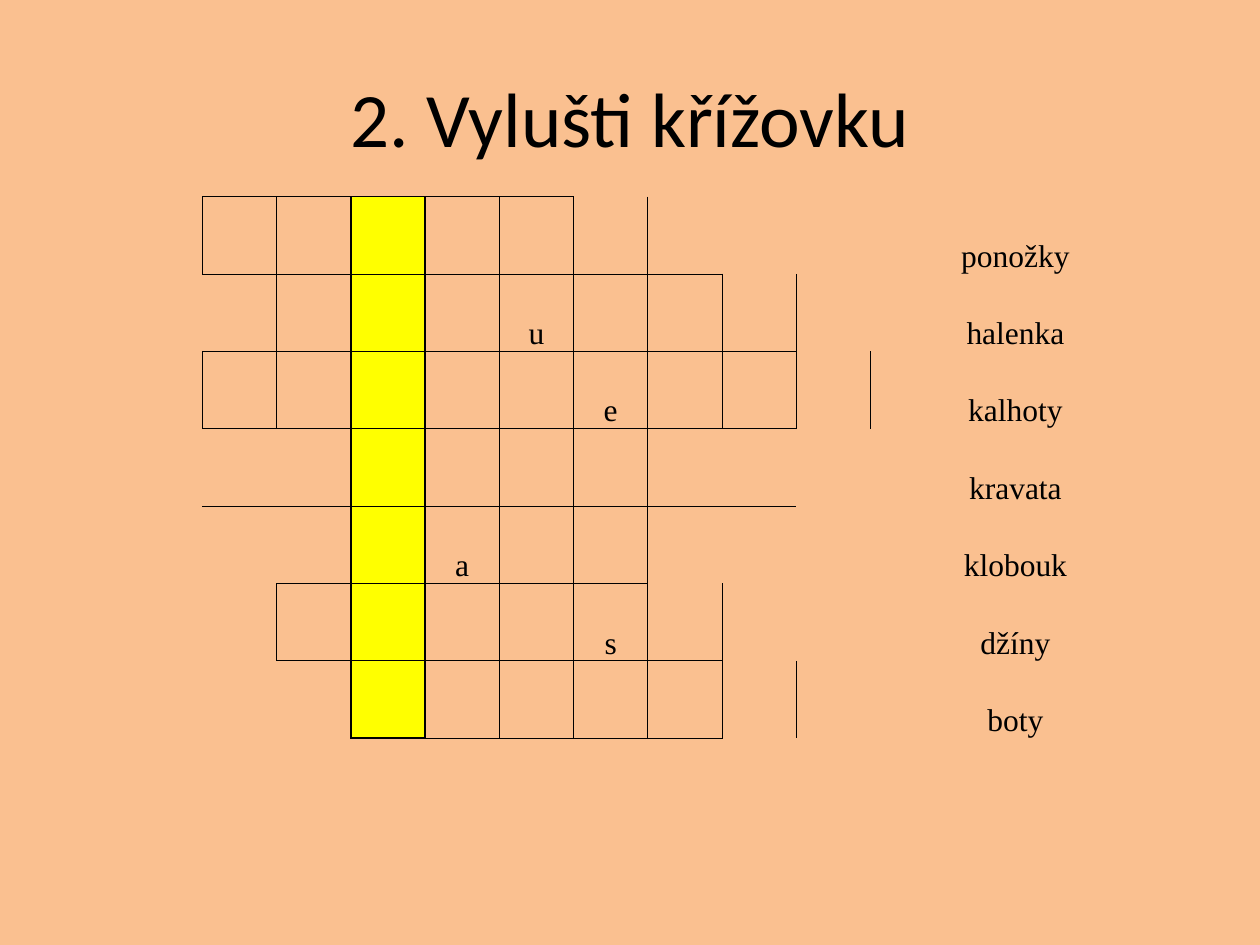
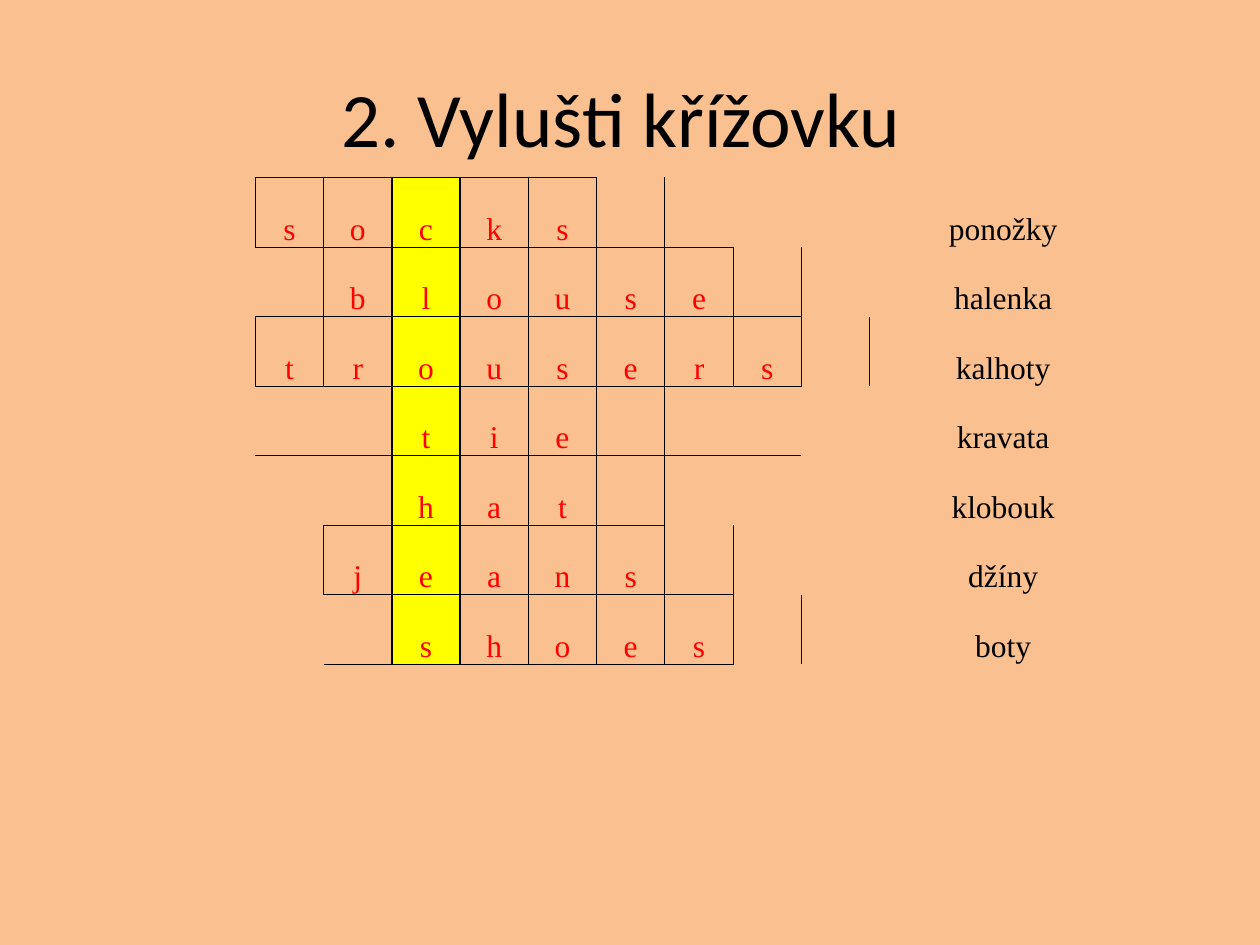
from pptx import Presentation as Deck
from pptx.dml.color import RGBColor as Color
from pptx.enum.text import MSO_ANCHOR as Anchor, PP_ALIGN as Align
from pptx.oxml import parse_xml
from pptx.oxml.ns import nsdecls
from pptx.util import Pt

HUES = {"page": "FAC090", "key": "FFFF00", "ink": "000000", "answer": "FF0000"}
PLAIN_STYLE = "{2D5ABB26-0587-4C30-8999-92F81FD0307C}"
TITLE = "2. Vylušti křížovku"

# Clue, answer, place of the key letter, place of the hint letter
WORDS = [
    ("ponožky", "socks", 2, None),
    ("halenka", "blouse", 1, 3),
    ("kalhoty", "trousers", 2, 5),
    ("kravata", "tie", 0, None),
    ("klobouk", "hat", 0, 1),
    ("džíny", "jeans", 1, 4),
    ("boty", "shoes", 0, None),
]
KEY = 3      # column of the hidden word
LAST = 10    # column of the clues
THIN, THICK = 0.5, 1


def hue(name):
    return Color.from_string(HUES[name])


def write(frame, text, size=18, font="Times New Roman", color="ink"):
    para = frame.paragraphs[0]
    para.alignment = Align.CENTER
    run = para.add_run()
    run.text = text
    run.font.size = Pt(size)
    run.font.name = font
    run.font.color.rgb = hue(color)


def add_page(deck, title):
    page = deck.slides.add_slide(deck.slide_layouts[6])
    page.background.fill.solid()
    page.background.fill.fore_color.rgb = hue("page")
    frame = page.shapes.add_textbox(Pt(36), Pt(21.6), Pt(648), Pt(90)).text_frame
    frame.word_wrap = True
    frame.vertical_anchor = Anchor.MIDDLE
    write(frame, title, size=44, font="Calibri")
    return page


def boxed(row, col):
    """Tell whether a letter belongs in this cell."""
    if not 0 <= row < len(WORDS):
        return False
    _, word, key, _ = WORDS[row]
    return 0 <= col - KEY + key < len(word)


def weigh(one, two):
    """Line width between two neighbour cells, 0 for no line."""
    if not (boxed(*one) or boxed(*two)):
        return 0
    in_key = [col == KEY for _, col in (one, two)]
    ends = boxed(*one) != boxed(*two)
    side = in_key[0] != in_key[1]
    return THICK if side or (all(in_key) and ends) else THIN


def rule(cell, row, col):
    sides = {"L": (row, col - 1), "R": (row, col + 1),
             "T": (row - 1, col), "B": (row + 1, col)}
    props = cell._tc.get_or_add_tcPr()
    for side, near in sides.items():
        width = weigh((row, col), near)
        if width:
            props.append(parse_xml(
                f'<a:ln{side} {nsdecls("a")} w="{Pt(width)}"><a:solidFill>'
                f'<a:srgbClr val="{HUES["ink"]}"/></a:solidFill></a:ln{side}>'))


def style(cell, row, col):
    cell.margin_left = cell.margin_right = cell.margin_top = Pt(0.7)
    cell.margin_bottom = 0
    cell.vertical_anchor = Anchor.BOTTOM
    rule(cell, row, col)
    if col == KEY and boxed(row, col):
        cell.fill.solid()
        cell.fill.fore_color.rgb = hue("key")
    else:
        cell.fill.background()


def add_grid(page, left, top, box, high, wide, rows, solved):
    """Draw square columns of width box and one wide clue column."""
    grid = page.shapes.add_table(rows, LAST + 1, Pt(left), Pt(top),
                                 Pt(box * LAST + wide), Pt(high * rows)).table
    grid.first_row = grid.horz_banding = False
    grid._tbl.tblPr[0].text = PLAIN_STYLE
    for col, part in enumerate(grid.columns):
        part.width = Pt(wide if col == LAST else box)
    for row, part in enumerate(grid.rows):
        part.height = Pt(high)
        for col in range(LAST + 1):
            style(grid.cell(row, col), row, col)

    # Clues and letters
    for row, (clue, word, key, hint) in enumerate(WORDS):
        write(grid.cell(row, LAST).text_frame, clue)
        for spot, letter in enumerate(word):
            if solved or spot == hint:
                write(grid.cell(row, KEY - key + spot).text_frame, letter,
                      color="answer" if solved else "ink")


def main():
    deck = Deck()
    deck.slide_width, deck.slide_height = Pt(720), Pt(540)

    # Puzzle
    page = add_page(deck, TITLE)
    add_grid(page, left=73.3, top=112.3, box=42.42, high=44.23, wide=165.8,
             rows=len(WORDS), solved=False)

    # Solution
    page = add_page(deck, TITLE + " ")
    add_grid(page, left=106.9, top=101.4, box=39.03, high=39.76, wide=152.6,
             rows=len(WORDS) + 1, solved=True)

    deck.save("out.pptx")


if __name__ == "__main__":
    main()
